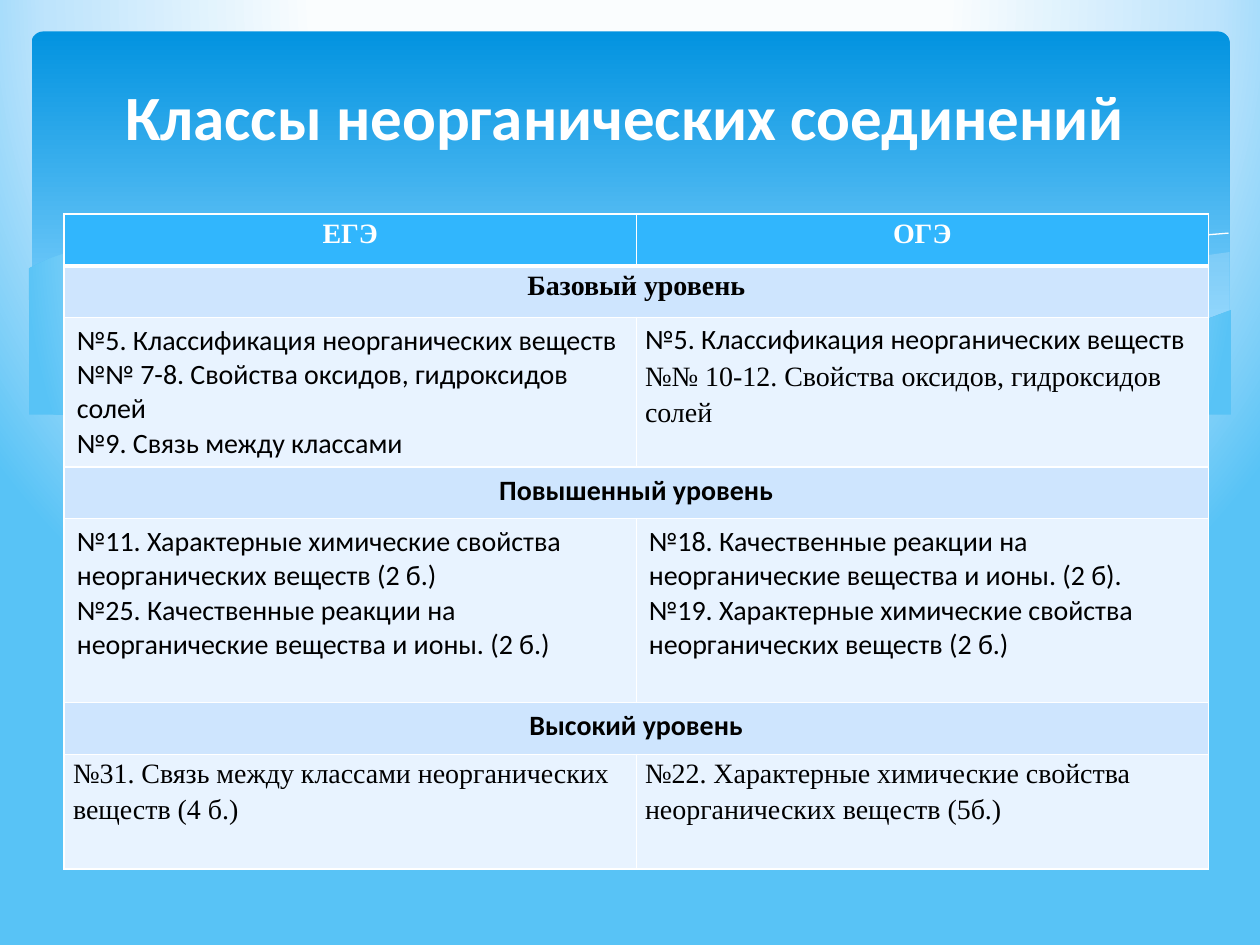
from lxml.etree import SubElement
from pptx import Presentation
from pptx.dml.color import RGBColor
from pptx.enum.shapes import MSO_SHAPE
from pptx.enum.text import MSO_ANCHOR, PP_ALIGN
from pptx.oxml import parse_xml
from pptx.oxml.ns import nsdecls, qn
from pptx.util import Inches, Pt

SANS, SERIF = "Calibri", "Times New Roman"
WHITE, BLACK, HEADER, LEVEL, BODY = "FFFFFF", "000000", "31B6FD", "CEE5FE", "E8F3FF"
SKY = [(40, "FAFDFE"), (74, "BEE4FC"), (100, "58C3F6")]
BANNER = [(0, "0293E0"), (90, "83D3FE")]

# Outlines as (x, y) in inches
RIGHT_WAVE = [
    (9.76, 2), (9.48, 2.04), (9.21, 2.1), (8.91, 2.16), (8.61, 2.23), (8.05, 2.37),
    (7.53, 2.48), (7.06, 2.57), (6.61, 2.65), (6.91, 2.69), (7.19, 2.72), (7.45, 2.75),
    (7.69, 2.77), (8.03, 2.78), (8.35, 2.77), (8.63, 2.75), (8.89, 2.72), (9.13, 2.67),
    (9.35, 2.62), (9.49, 2.57), (9.63, 2.52), (9.76, 2.47)]
MIDDLE_WAVE = [
    (8.93, 2.73), (8.66, 2.69), (8.07, 2.6), (7.41, 2.47), (6.68, 2.31), (6.29, 2.22),
    (5.98, 2.14), (5.69, 2.08), (5.41, 2.03), (5.14, 1.98), (4.89, 1.94), (4.42, 1.89),
    (3.99, 1.86), (3.61, 1.85), (3.28, 1.87), (2.86, 1.91), (3.23, 1.96), (3.62, 2.03),
    (4.04, 2.11), (4.49, 2.22), (4.91, 2.32), (5.3, 2.4), (5.66, 2.48), (6.01, 2.55),
    (6.34, 2.61), (6.65, 2.66), (6.95, 2.7), (7.22, 2.74), (7.48, 2.76), (7.85, 2.78),
    (8.28, 2.78), (8.57, 2.77), (8.76, 2.75)]
LONG_CURVE = [
    (3.09, 1.95), (3.28, 1.92), (3.53, 1.89), (3.87, 1.87), (4.33, 1.87), (4.69, 1.89),
    (5.1, 1.92), (5.56, 1.97), (6.08, 2.04), (6.65, 2.13), (7.27, 2.26), (7.95, 2.41),
    (8.31, 2.51), (8.69, 2.61), (9.07, 2.72)]
SHORT_CURVE = [
    (6.13, 2.57), (6.53, 2.46), (6.95, 2.35), (7.48, 2.23), (8.06, 2.1), (8.66, 1.99),
    (8.95, 1.94), (9.24, 1.9), (9.51, 1.87), (9.75, 1.85)]
LOWER_EDGE = [
    (9.77, 2.46), (9.59, 2.53), (9.4, 2.59), (9.2, 2.65), (8.99, 2.69), (8.75, 2.73),
    (8.5, 2.75), (8.09, 2.77), (7.61, 2.75), (7.26, 2.72), (6.88, 2.68), (6.48, 2.62),
    (6.03, 2.54), (5.55, 2.45), (5.03, 2.33), (4.47, 2.2), (3.91, 2.07), (3.4, 1.97),
    (2.92, 1.9), (2.5, 1.86), (2.11, 1.84), (1.61, 1.84), (1.32, 1.86), (1.06, 1.89),
    (0.85, 1.93), (0.67, 1.97), (0.52, 2.01), (0.4, 2.05), (0.29, 2.1), (0.23, 2.13),
    (0.23, 3.29), (9.77, 3.29)]

# Row height and cells; a cell is a list of (text, font), one per paragraph
ROWS = [
    (0.41, [[("ЕГЭ", SERIF)], [("ОГЭ", SERIF)]]),
    (0.41, [[("Базовый уровень", SERIF)]]),
    (1.18, [[("№5. Классификация неорганических веществ", SANS),
             ("№№ 7-8. Свойства оксидов, гидроксидов солей", SANS),
             ("№9. Связь между классами", SANS)],
            [("№5. Классификация неорганических веществ", SANS),
             ("№№ 10-12. Свойства оксидов, гидроксидов солей", SERIF)]]),
    (0.41, [[("Повышенный уровень", SANS)]]),
    (1.46, [[("№11. Характерные химические свойства неорганических веществ (2 б.)", SANS),
             ("№25. Качественные реакции на неорганические вещества и ионы. (2 б.)", SANS)],
            [("№18. Качественные реакции на неорганические вещества и ионы. (2 б).", SANS),
             ("№19. Характерные химические свойства неорганических веществ (2 б.)", SANS)]]),
    (0.41, [[("Высокий уровень", SANS)]]),
    (0.91, [[("№31. Связь между классами неорганических веществ (4 б.)", SERIF)],
            [("№22. Характерные химические свойства неорганических веществ (5б.)", SERIF)]]),
]


def color(value):
    return RGBColor.from_string(value)


def set_gradient(fill, properties, stops, radial=False):
    """Fill with (percent, colour) stops, downwards or out from above the top edge."""
    fill.gradient()
    gradient = properties.find(qn("a:gradFill"))
    for child in list(gradient):
        gradient.remove(child)
    stop_list = SubElement(gradient, qn("a:gsLst"))
    for percent, value in stops:
        stop = SubElement(stop_list, qn("a:gs"), pos=str(percent * 1000))
        SubElement(stop, qn("a:srgbClr"), val=value)
    if radial:
        circle = SubElement(gradient, qn("a:path"), path="circle")
        SubElement(circle, qn("a:fillToRect"), l="20000", t="-40000", r="20000", b="140000")
    else:
        SubElement(gradient, qn("a:lin"), ang="5400000", scaled="0")


def add_outline(page, points, closed=True):
    corners = [(Inches(x), Inches(y)) for x, y in points]
    builder = page.shapes.build_freeform(*corners[0])
    builder.add_line_segments(corners[1:], close=closed)
    shape = builder.convert_to_shape()
    shape.shadow.inherit = False
    shape.line.fill.background()
    return shape


def add_wave(page, points, opacity):
    wave = add_outline(page, points)
    wave.fill.solid()
    wave.fill.fore_color.rgb = color("C6E7FC")
    tint = wave.fill._xPr.find(qn("a:solidFill"))[0]
    SubElement(tint, qn("a:alpha"), val=str(opacity * 1000))


def add_curve(page, points):
    curve = add_outline(page, points, closed=False)
    curve.fill.background()
    curve.line.color.rgb = color(WHITE)
    curve.line.width = Pt(0)


def add_banner(page):
    banner = page.shapes.add_shape(
        MSO_SHAPE.ROUNDED_RECTANGLE, Inches(0.25), Inches(0.25), Inches(9.51), Inches(2.7))
    banner.adjustments[0] = 0.034
    banner.shadow.inherit = False
    banner.line.fill.background()
    set_gradient(banner.fill, banner._element.spPr, BANNER)
    add_wave(page, RIGHT_WAVE, 29)
    add_wave(page, MIDDLE_WAVE, 40)
    add_curve(page, LONG_CURVE)
    add_curve(page, SHORT_CURVE)
    edge = add_outline(page, LOWER_EDGE)
    set_gradient(edge.fill, edge._element.spPr, SKY, radial=True)


def set_borders(cell, bottom_width):
    properties = cell._tc.get_or_add_tcPr()
    for index, side in enumerate("LRTB"):
        width = Pt(bottom_width if side == "B" else 1)
        properties.insert(index, parse_xml(
            f'<a:ln{side} {nsdecls("a")} w="{width}"><a:solidFill>'
            f'<a:srgbClr val="{WHITE}"/></a:solidFill></a:ln{side}>'))


def fill_cell(cell, paragraphs, fill, font_color, heading):
    """Write the cell; those with serif text have tight margins and wider lines."""
    cell.fill.solid()
    cell.fill.fore_color.rgb = color(fill)
    tight = any(font == SERIF for _, font in paragraphs)
    if tight:
        cell.margin_left = cell.margin_right = Inches(0.07)
        cell.margin_top = cell.margin_bottom = 0
    frame = cell.text_frame
    frame.text = "\n".join(text for text, _ in paragraphs)
    for paragraph, (_, font) in zip(frame.paragraphs, paragraphs):
        paragraph.alignment = PP_ALIGN.CENTER if heading else PP_ALIGN.LEFT
        if tight:
            paragraph.line_spacing = 1.15
        paragraph.font.name = font
        paragraph.font.size = Pt(16)
        paragraph.font.bold = heading
        paragraph.font.color.rgb = color(font_color)


def add_levels_table(page):
    height = sum(row_height for row_height, _ in ROWS)
    table = page.shapes.add_table(
        len(ROWS), 2, Inches(0.51), Inches(1.7), Inches(9.08), Inches(height)).table
    table.first_row = table.horz_banding = False
    for index, (row_height, cells) in enumerate(ROWS):
        table.rows[index].height = Inches(row_height)
        is_header, is_level = index == 0, len(cells) == 1
        if is_level:
            table.cell(index, 0).merge(table.cell(index, 1))
        fill = HEADER if is_header else LEVEL if is_level else BODY
        for column, paragraphs in enumerate(cells):
            fill_cell(table.cell(index, column), paragraphs, fill,
                      WHITE if is_header else BLACK, is_header or is_level)
        for column in range(2):
            set_borders(table.cell(index, column), 3 if is_header else 1)


def place_title(page, text):
    title = page.shapes.title
    title.left, title.top = Inches(0.43), Inches(0.29)
    title.width, title.height = Inches(9.06), Inches(1.25)
    title.text_frame.text = text
    title.text_frame.vertical_anchor = MSO_ANCHOR.MIDDLE
    paragraph = title.text_frame.paragraphs[0]
    paragraph.alignment = PP_ALIGN.CENTER
    paragraph.font.name = SANS
    paragraph.font.size = Pt(36)
    paragraph.font.bold = True
    paragraph.font.color.rgb = color(WHITE)
    page.shapes._spTree.append(title._element)  # bring to front


def main():
    deck = Presentation()
    deck.slide_width, deck.slide_height = Inches(10), Inches(7.5)
    page = deck.slides.add_slide(deck.slide_layouts[5])
    background = page.background.fill
    set_gradient(background, background._xPr, SKY, radial=True)
    add_banner(page)
    add_levels_table(page)
    place_title(page, "Классы неорганических соединений")
    deck.save("out.pptx")


if __name__ == "__main__":
    main()
